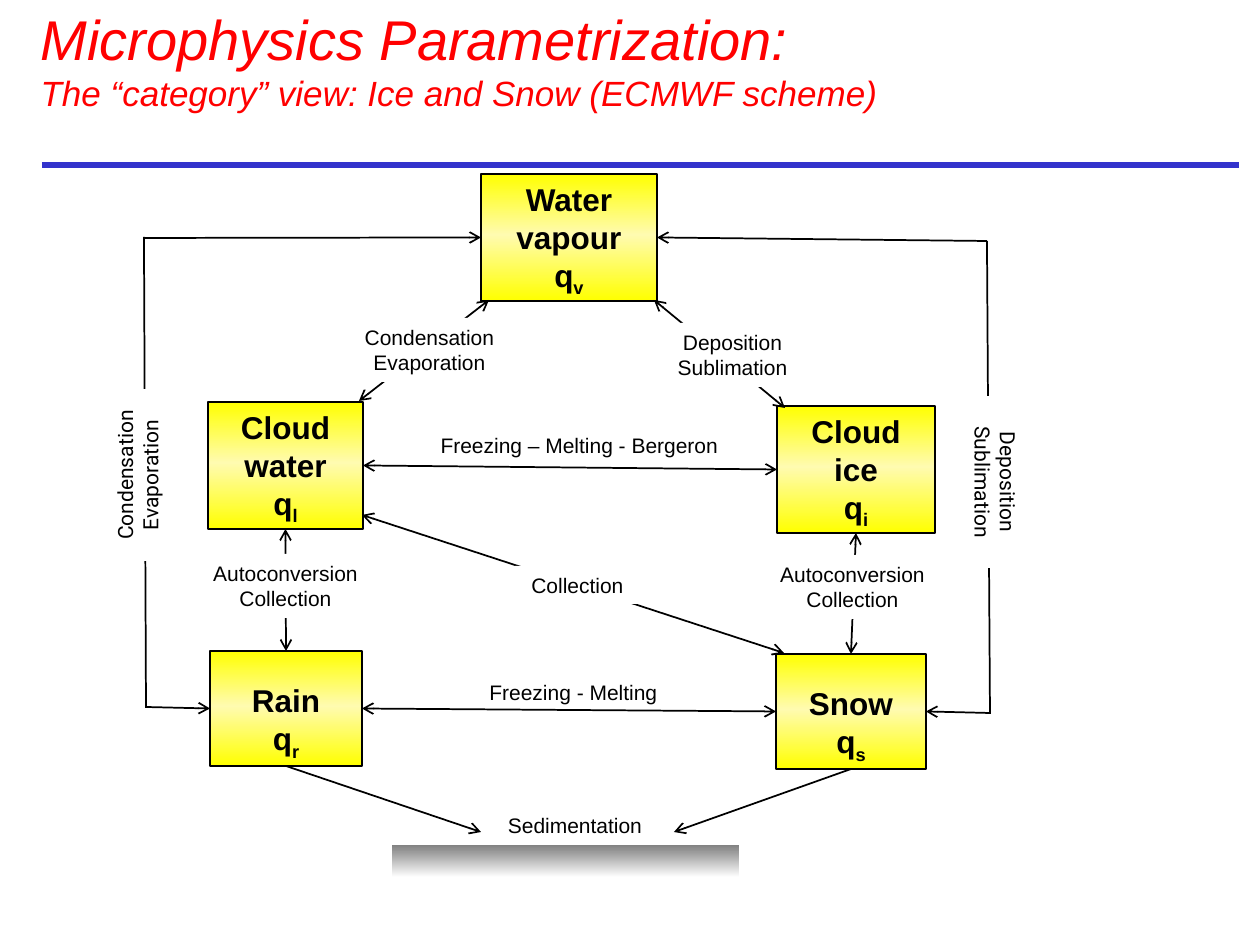
"""Build the microphysics slide: water categories and the processes linking them."""
from dataclasses import dataclass
from typing import NamedTuple, Optional, Union

import lxml.etree
import pptx
import pptx.dml.color
import pptx.enum.shapes
import pptx.enum.text
import pptx.oxml.ns
import pptx.util

EMU_PER_PX = 914400 / 126
RED = pptx.dml.color.RGBColor(0xFF, 0x00, 0x00)
BLUE = pptx.dml.color.RGBColor(0x33, 0x33, 0xCC)
BLACK = pptx.dml.color.RGBColor(0x00, 0x00, 0x00)
WHITE = pptx.dml.color.RGBColor(0xFF, 0xFF, 0xFF)
GREY = pptx.dml.color.RGBColor(0x80, 0x80, 0x80)
YELLOW = pptx.dml.color.RGBColor(0xFF, 0xFF, 0x00)
CREAM = pptx.dml.color.RGBColor(0xFF, 0xFB, 0xB0)
TOP, LEFT, BOTTOM, RIGHT = range(4)
RECTANGLE = pptx.enum.shapes.MSO_SHAPE.RECTANGLE
INSET = 6


class Frame(NamedTuple):
    left: int
    top: int
    width: int
    height: int


class Point(NamedTuple):
    x: int
    y: int


class Side(NamedTuple):
    category: str
    site: int


End = Union[Point, Side]


@dataclass(frozen=True)
class Category:
    name: str
    index: str
    frame: Frame
    drop: int = 0


@dataclass(frozen=True)
class Link:
    start: End
    end: End
    arrows: tuple = ("headEnd", "tailEnd")


@dataclass(frozen=True)
class Label:
    text: str
    frame: Frame
    filled: bool = True
    vert: Optional[str] = None


INWARD = ("tailEnd",)
CATEGORIES = (
    Category("Cloud ice", "i", Frame(777, 406, 158, 127)),
    Category("Snow", "s", Frame(776, 654, 150, 115), drop=24),
    Category("Cloud water", "l", Frame(208, 402, 155, 127)),
    Category("Rain", "r", Frame(210, 651, 152, 115), drop=24),
    Category("Water vapour", "v", Frame(481, 174, 176, 127)),
)
LINKS = (
    Link(Point(359, 401), Point(489, 300)),
    Link(Point(654, 300), Point(785, 408)),
    Link(Side("Cloud ice", BOTTOM), Side("Snow", TOP)),
    Link(Side("Cloud water", BOTTOM), Side("Rain", TOP)),
    Link(Side("Rain", RIGHT), Side("Snow", LEFT)),
    Link(Side("Cloud water", RIGHT), Side("Cloud ice", LEFT)),
    Link(Point(362, 515), Point(784, 653)),
    Link(Point(144, 238), Side("Water vapour", LEFT), INWARD),
    Link(Point(144, 237), Point(146, 708), ()),
    Link(Point(146, 707), Side("Rain", LEFT), INWARD),
    Link(Point(987, 241), Side("Water vapour", RIGHT), INWARD),
    Link(Point(987, 241), Point(990, 714), ()),
    Link(Point(990, 713), Side("Snow", RIGHT), INWARD),
    Link(Side("Rain", BOTTOM), Point(481, 832), INWARD),
    Link(Side("Snow", BOTTOM), Point(674, 832), INWARD),
)
LABELS = (
    Label("Freezing - Melting", Frame(397, 673, 353, 38), filled=False),
    Label("Autoconversion Collection", Frame(741, 555, 223, 64)),
    Label("Autoconversion Collection", Frame(174, 554, 223, 64)),
    Label("Freezing – Melting - Bergeron", Frame(403, 426, 353, 38), filled=False),
    Label("Deposition Sublimation", Frame(621, 323, 223, 64)),
    Label("Condensation Evaporation", Frame(318, 318, 223, 64)),
    Label("Collection", Frame(515, 566, 125, 38)),
    Label("Condensation Evaporation", Frame(106, 389, 77, 172), vert="vert270"),
    Label("Deposition Sublimation", Frame(950, 396, 77, 172), vert="vert"),
    Label("Sedimentation", Frame(495, 806, 160, 38)),
)


def emu(px: int) -> int:
    """Turn px into EMU."""
    return round(px * EMU_PER_PX)


def add_span(para, text: str, size: int, color=BLACK, font="Arial", bold=False, italic=False):
    """Add one formatted run."""
    span = para.add_run()
    span.text = text
    span.font.size = pptx.util.Pt(size)
    span.font.name = font
    span.font.bold = bold
    span.font.italic = italic
    span.font.color.rgb = color
    return span


def fill_gradient(box, stops: tuple) -> None:
    """Fill a shape from top to bottom with (percent, colour) stops."""
    box.fill.gradient()
    box.fill.gradient_angle = 270
    qn = pptx.oxml.ns.qn
    stop_list = next(box._element.spPr.iter(qn("a:gsLst")))
    for stop in list(stop_list):
        stop_list.remove(stop)
    for percent, color in stops:
        stop = lxml.etree.SubElement(stop_list, qn("a:gs"), pos=str(percent * 1000))
        lxml.etree.SubElement(stop, qn("a:srgbClr"), val=str(color))


def add_gradient_box(page, frame: Frame, stops: tuple):
    """Add a rectangle with a gradient and no shadow."""
    box = page.shapes.add_shape(RECTANGLE, *map(emu, frame))
    box.shadow.inherit = False
    fill_gradient(box, stops)
    return box


def add_category(page, category: Category):
    """Add a yellow box with a name and its symbol."""
    box = add_gradient_box(page, category.frame, ((0, YELLOW), (48, CREAM), (100, YELLOW)))
    box.line.color.rgb = BLACK
    box.line.width = pptx.util.Pt(1)
    frame = box.text_frame
    frame.word_wrap = True
    frame.vertical_anchor = pptx.enum.text.MSO_ANCHOR.TOP
    frame.margin_top = emu(INSET + category.drop)
    name, symbol = frame.paragraphs[0], frame.add_paragraph()
    add_span(name, category.name, 18, bold=True)
    add_span(symbol, "q", 18, bold=True)
    index = add_span(symbol, category.index, 18, bold=True)
    index._r.get_or_add_rPr().set("baseline", "-25000")
    for para in frame.paragraphs:
        para.alignment = pptx.enum.text.PP_ALIGN.CENTER
    return box


def add_line(page, start: Point, end: Point, color, width: int, arrows: tuple = ()):
    """Add a straight connector with open arrowheads."""
    line = page.shapes.add_connector(
        pptx.enum.shapes.MSO_CONNECTOR.STRAIGHT, *map(emu, (*start, *end)))
    line.line.color.rgb = color
    line.line.width = pptx.util.Pt(width)
    properties = line._element.spPr
    qn = pptx.oxml.ns.qn
    for arrow in arrows:
        lxml.etree.SubElement(properties.find(qn("a:ln")), qn(f"a:{arrow}"), type="arrow")
    lxml.etree.SubElement(properties, qn("a:effectLst"))
    return line


def add_link(page, link: Link, boxes: dict) -> None:
    """Add a process line and join it to category boxes."""
    points = [end if isinstance(end, Point) else Point(0, 0) for end in (link.start, link.end)]
    line = add_line(page, *points, BLACK, 1, link.arrows)
    for end, connect in ((link.start, line.begin_connect), (link.end, line.end_connect)):
        if isinstance(end, Side):
            connect(boxes[end.category], end.site)


def add_label(page, label: Label) -> None:
    """Add the name of a process."""
    box = page.shapes.add_textbox(*map(emu, label.frame))
    box.text_frame.word_wrap = True
    if label.filled:
        box.fill.solid()
        box.fill.fore_color.rgb = WHITE
    if label.vert:
        box.text_frame._txBody.bodyPr.set("vert", label.vert)
    para = box.text_frame.paragraphs[0]
    para.alignment = pptx.enum.text.PP_ALIGN.CENTER
    add_span(para, label.text, 12, font="Roboto" if label.vert else "Arial")


def set_title(page) -> None:
    """Place and format the two-line title."""
    title = page.shapes.title
    title.left, title.top, title.width, title.height = map(emu, Frame(28, 20, 1108, 78))
    title.text_frame.word_wrap = True
    title.text_frame.auto_size = pptx.enum.text.MSO_AUTO_SIZE.NONE
    title.text_frame.vertical_anchor = pptx.enum.text.MSO_ANCHOR.MIDDLE
    para = title.text_frame.paragraphs[0]
    para.alignment = pptx.enum.text.PP_ALIGN.LEFT
    add_span(para, "Microphysics Parametrization:", 32, RED, italic=True)
    para.add_line_break()
    add_span(para, "The “category” view: Ice and Snow (ECMWF scheme)", 20, RED, italic=True)


def main() -> None:
    """Build and save the deck."""
    deck = pptx.Presentation()
    deck.slide_width, deck.slide_height = emu(1260), emu(945)
    page = deck.slides.add_slide(deck.slide_layouts[5])
    set_title(page)
    add_line(page, Point(42, 165), Point(1239, 165), BLUE, 3)
    boxes = {category.name: add_category(page, category) for category in CATEGORIES}
    for link in LINKS:
        add_link(page, link, boxes)
    ground = add_gradient_box(page, Frame(392, 845, 347, 66), ((0, GREY), (49, WHITE)))
    ground.line.fill.background()
    for label in LABELS:
        add_label(page, label)
    deck.save("out.pptx")


if __name__ == "__main__":
    main()
